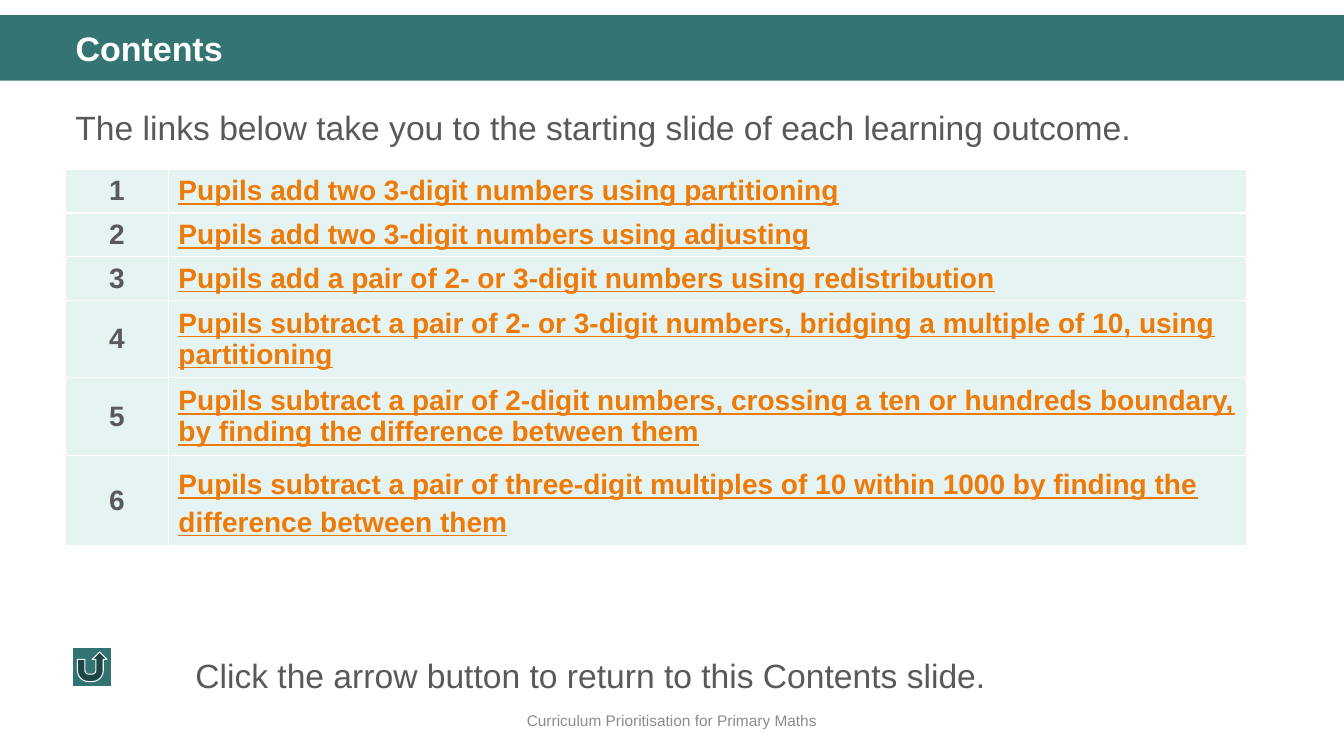
from dataclasses import dataclass
from lxml.etree import SubElement as Sub
from pptx import Presentation
from pptx.dml.color import RGBColor as Rgb
from pptx.enum.shapes import MSO_SHAPE as Kind
from pptx.enum.text import MSO_ANCHOR as Anchor, MSO_AUTO_SIZE as Fit, PP_ALIGN as Align
from pptx.oxml.ns import qn
from pptx.util import Inches, Pt

TITLE = "Contents"
INTRO = "The links below take you to the starting slide of each learning outcome."
GOALS = [
    ("Pupils add two 3-digit numbers using partitioning", 1, 1),
    ("Pupils add two 3-digit numbers using adjusting", 1, 1),
    ("Pupils add a pair of 2- or 3-digit numbers using redistribution", 1, 1),
    ("Pupils subtract a pair of 2- or 3-digit numbers, bridging a multiple of 10, using partitioning", 2, 1),
    ("Pupils subtract a pair of 2-digit numbers, crossing a ten or hundreds boundary, "
     "by finding the difference between them", 2, 1),
    ("Pupils subtract a pair of three-digit multiples of 10 within 1000 by finding the "
     "difference between them", 2, 1.2),
]
HINT = "Click the arrow button to return to this Contents slide."
FOOT = "Curriculum Prioritisation for Primary Maths"

WIDE, HIGH = Inches(13.33), Inches(7.5)
LEFT, SPAN = 4.88, 91.37
AREAS = {
    "band": (0, 2, 100, 8.67),
    "title": (LEFT, 3.6, SPAN, 6.27),
    "intro": (LEFT, 12.4, SPAN, 46.8),
    "button": (5.4, 85.6, 2.93, 5.2),
    "hint": (13.8, 86, 84.92, 6.67),
    "foot": (0, 92.67, 100, 5.33),
}
COLS = (7.65, 80.2)
TOP, LINE, PAD = 22.4, 4.1, 1.4


@dataclass(frozen=True)
class Theme:
    font: str = "Arial"
    band: str = "347574"
    button: str = "327473"
    cell: str = "E5F3F2"
    text: str = "595959"
    link: str = "EE7B08"
    foot: str = "8C8C8C"
    white: str = "FFFFFF"
    head: float = 24.3
    body: float = 24
    row: float = 20
    small: float = 11


theme = Theme()


def across(share):
    return round(WIDE * share / 100)


def down(share):
    return round(HIGH * share / 100)


def area(name):
    x, y, w, h = AREAS[name]
    return across(x), down(y), across(w), down(h)


def paint(item, color):
    item.fill.solid()
    item.fill.fore_color.rgb = Rgb.from_string(color)


def write(frame, text, size, color, bold=False, under=False, align=Align.LEFT, gap=None):
    frame.word_wrap = True
    para = frame.paragraphs[0]
    para.text = text
    para.alignment = align
    para.line_spacing = gap
    font = para.runs[0].font
    font.name, font.size = theme.font, Pt(size)
    font.bold, font.underline = bold, under
    font.color.rgb = Rgb.from_string(color)
    return para


def label(slide, name, text, size, color, **style):
    frame = slide.shapes.add_textbox(*area(name)).text_frame
    return frame, write(frame, text, size, color, **style)


def block(slide, name, kind, color):
    shape = slide.shapes.add_shape(kind, *area(name))
    shape.shadow.inherit = False
    paint(shape, color)
    return shape


def edge(cell):
    props = cell._tc.get_or_add_tcPr()
    for spot, side in enumerate(("lnL", "lnR", "lnT", "lnB")):
        line = Sub(props, qn("a:" + side), w=str(Pt(1)))
        fill = Sub(line, qn("a:solidFill"))
        Sub(fill, qn("a:srgbClr"), val=theme.white)
        props.insert(spot, line)


def add_goals(slide):
    highs = [PAD + LINE * lines * gap for _, lines, gap in GOALS]
    table = slide.shapes.add_table(
        len(GOALS), len(COLS), across(LEFT), down(TOP), across(sum(COLS)), down(sum(highs))
    ).table
    table.first_row = table.horz_banding = False
    for col, width in zip(table.columns, COLS):
        col.width = across(width)
    for at, (text, _, gap) in enumerate(GOALS):
        table.rows[at].height = down(highs[at])
        num, goal = table.cell(at, 0), table.cell(at, 1)
        write(num.text_frame, str(at + 1), theme.row, theme.text, bold=True, align=Align.CENTER)
        write(goal.text_frame, text, theme.row, theme.link, bold=True, under=True, gap=gap)
        for cell in (num, goal):
            cell.vertical_anchor = Anchor.MIDDLE
            paint(cell, theme.cell)
            edge(cell)


def main():
    deck = Presentation()
    deck.slide_width, deck.slide_height = WIDE, HIGH
    slide = deck.slides.add_slide(deck.slide_layouts[5])

    block(slide, "band", Kind.RECTANGLE, theme.band).line.fill.background()
    title = slide.shapes.title
    title.left, title.top, title.width, title.height = area("title")
    write(title.text_frame, TITLE, theme.head, theme.white, bold=True, gap=0.9)
    title.text_frame.auto_size = Fit.NONE
    title.text_frame.vertical_anchor = Anchor.MIDDLE
    title.element.getparent().append(title.element)

    frame, _ = label(slide, "foot", FOOT, theme.small, theme.foot, align=Align.CENTER)
    frame.vertical_anchor = Anchor.MIDDLE
    _, para = label(slide, "intro", INTRO, theme.body, theme.text, gap=1.2)
    para.space_before = Pt(10)
    add_goals(slide)
    button = block(slide, "button", Kind.ACTION_BUTTON_RETURN, theme.button)
    button.line.color.rgb = Rgb.from_string(theme.white)
    button.line.width = Pt(0.75)
    frame, _ = label(slide, "hint", HINT, theme.body, theme.text)
    frame.auto_size = Fit.SHAPE_TO_FIT_TEXT

    deck.save("out.pptx")


if __name__ == "__main__":
    main()
